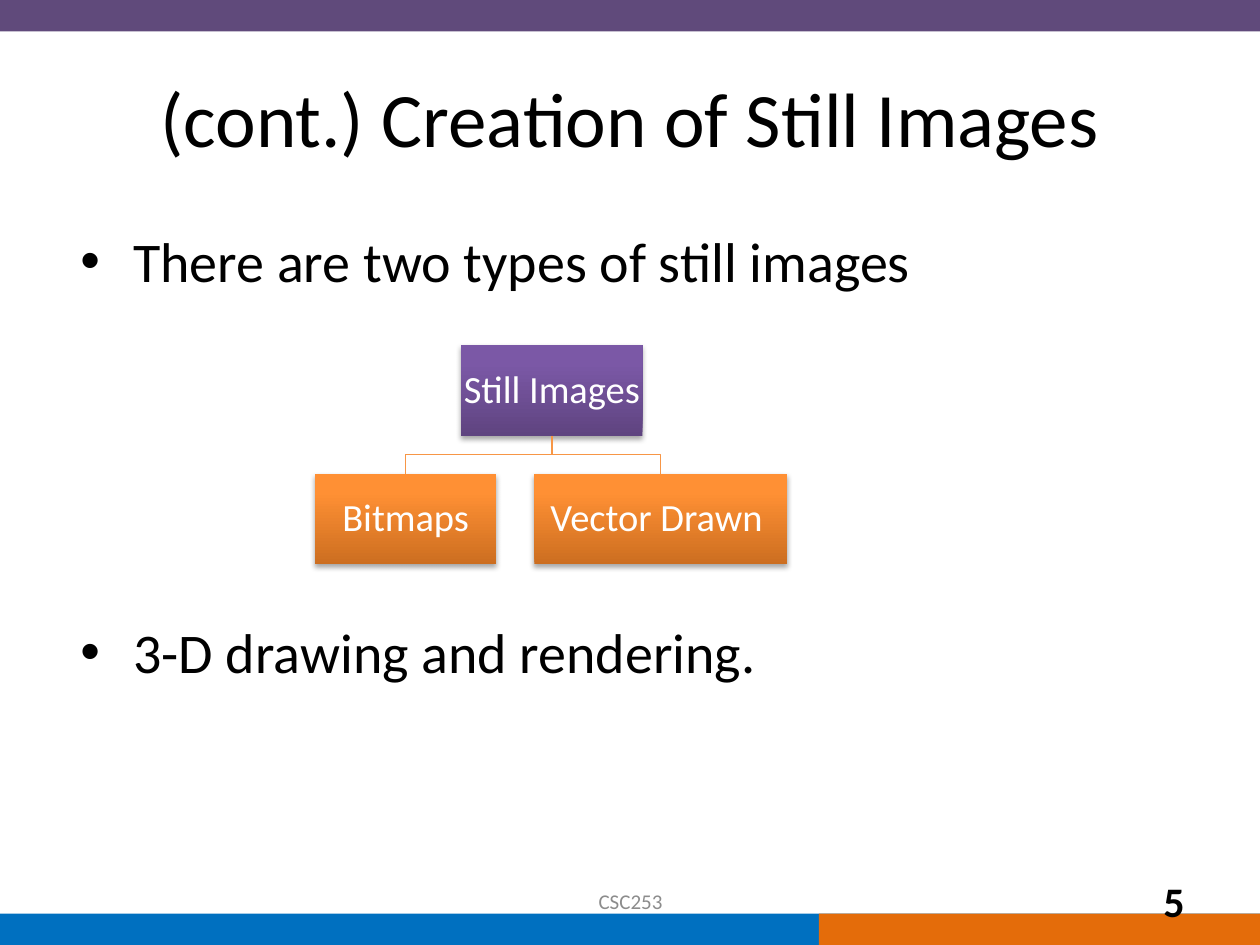
from copy import deepcopy

from lxml.etree import SubElement
from pptx import Presentation
from pptx.dml.color import RGBColor
from pptx.enum.shapes import MSO_SHAPE
from pptx.enum.text import MSO_ANCHOR, PP_ALIGN
from pptx.oxml.ns import qn
from pptx.util import Inches, Pt

COLORS = {
    "plum": "604A7B", "blue": "0070C0", "rust": "E46C0A",
    "black": "000000", "gray": "8C8C8C", "white": "FFFFFF", "line": "F79646",
    "root_dark": "5F4480", "root_light": "7B58A6",
    "leaf_dark": "CC6E20", "leaf_light": "FF9034",
}


def color(name):
    return RGBColor.from_string(COLORS[name])


def style(para, size, name="black", align=None, bold=False):
    para.alignment = align
    for run in para.runs:
        font = run.font
        font.name, font.size, font.bold = "Calibri", Pt(size), bold
        font.color.rgb = color(name)


def add_rect(slide, x, y, w, h):
    rect = slide.shapes.add_shape(
        MSO_SHAPE.RECTANGLE, Inches(x), Inches(y), Inches(w), Inches(h))
    rect.shadow.inherit = False
    rect.line.fill.background()
    return rect


def add_bar(slide, x, y, w, name):
    bar = add_rect(slide, x, y, w, 0.25)
    bar.fill.solid()
    bar.fill.fore_color.rgb = color(name)


def add_text(slide, x, y, w, h, text, anchor=MSO_ANCHOR.MIDDLE):
    box = slide.shapes.add_textbox(Inches(x), Inches(y), Inches(w), Inches(h))
    frame = box.text_frame
    frame.word_wrap = True
    frame.vertical_anchor = anchor
    frame.text = text
    return frame


def add_bullets(slide, items, gap):
    frame = add_text(slide, 0.5, 1.75, 9, 4.95, "\n".join(items), MSO_ANCHOR.TOP)
    for i, para in enumerate(frame.paragraphs):
        props = para._p.get_or_add_pPr()
        props.set("marL", str(Inches(0.46)))
        props.set("indent", str(Inches(-0.42)))
        SubElement(props, qn("a:buFont"), typeface="Arial")
        SubElement(props, qn("a:buChar"), char="•")
        if i:
            para.space_before = Pt(gap)
        style(para, 32)


def shade(box, dark, light):
    # Vertical gradient, dark at the foot, level over the top fifth
    box.fill.gradient()
    box.fill.gradient_angle = 90
    stops = box.fill.gradient_stops
    for stop, name, place in zip(stops, (dark, light), (0, 0.8)):
        stop.color.rgb = color(name)
        stop.position = place
    group = box._element.spPr.find(qn("a:gradFill")).find(qn("a:gsLst"))
    last = deepcopy(group[-1])
    last.set("pos", "100000")
    group.append(last)


def add_shadow(box):
    effects = box._element.spPr.find(qn("a:effectLst"))
    shadow = SubElement(effects, qn("a:outerShdw"), blurRad=str(Pt(3.1)),
                        dist=str(Pt(1.8)), dir="5400000", rotWithShape="0")
    tint = SubElement(shadow, qn("a:srgbClr"), val=COLORS["black"])
    SubElement(tint, qn("a:alpha"), val="35000")


def add_node(slide, x, y, w, text, kind):
    box = add_rect(slide, x, y, w, 0.72)
    shade(box, kind + "_dark", kind + "_light")
    add_shadow(box)
    frame = box.text_frame
    frame.margin_left = frame.margin_right = Inches(0.02)
    frame.margin_top = frame.margin_bottom = Inches(0.02)
    frame.word_wrap = False
    frame.vertical_anchor = MSO_ANCHOR.MIDDLE
    frame.text = text
    frame.paragraphs[0].line_spacing = 0.9
    style(frame.paragraphs[0], 22, "white", PP_ALIGN.CENTER)
    return box


def add_branch(slide, root, leaf):
    # Elbow from the foot of the root to the head of the leaf
    x1, y1 = root.left + root.width // 2, root.top + root.height
    x2, y2 = leaf.left + leaf.width // 2, leaf.top
    mid = (y1 + y2) // 2
    pen = slide.shapes.build_freeform(x1, y1)
    pen.add_line_segments([(x1, mid), (x2, mid), (x2, y2)], close=False)
    branch = pen.convert_to_shape()
    branch.shadow.inherit = False
    branch.fill.background()
    branch.line.color.rgb = color("line")
    branch.line.width = Pt(0.75)


def main():
    deck = Presentation()
    deck.slide_width, deck.slide_height = Inches(10), Inches(7.5)
    slide = deck.slides.add_slide(deck.slide_layouts[5])

    # Bands at top and foot
    add_bar(slide, 0, 0, 10, "plum")
    add_bar(slide, -0.08, 7.25, 10.08, "blue")
    add_bar(slide, 6.5, 7.25, 3.5, "rust")

    # Title
    title = slide.shapes.title
    title.left, title.top = Inches(0.5), Inches(0.3)
    title.width, title.height = Inches(9), Inches(1.25)
    title.text_frame.text = "(cont.) Creation of Still Images"
    title.text_frame.vertical_anchor = MSO_ANCHOR.MIDDLE
    style(title.text_frame.paragraphs[0], 44, align=PP_ALIGN.CENTER)

    # Bullets, with room for the tree between them
    add_bullets(slide, ["There are two types of still images",
                        "3-D drawing and rendering."], 185)

    # Tree of image types
    root = add_node(slide, 3.66, 2.74, 1.44, "Still Images", "root")
    for x, w, text in ((2.5, 1.44, "Bitmaps"), (4.24, 2.01, "Vector Drawn ")):
        leaf = add_node(slide, x, 3.76, w, text, "leaf")
        add_branch(slide, root, leaf)

    # Footer and page number
    foot = add_text(slide, 3.42, 6.95, 3.17, 0.4, "CSC253")
    style(foot.paragraphs[0], 12, "gray", PP_ALIGN.CENTER)
    page = add_text(slide, 7.17, 6.95, 2.33, 0.4, "5")
    style(page.paragraphs[0], 24, align=PP_ALIGN.RIGHT, bold=True)

    deck.save("out.pptx")


if __name__ == "__main__":
    main()
